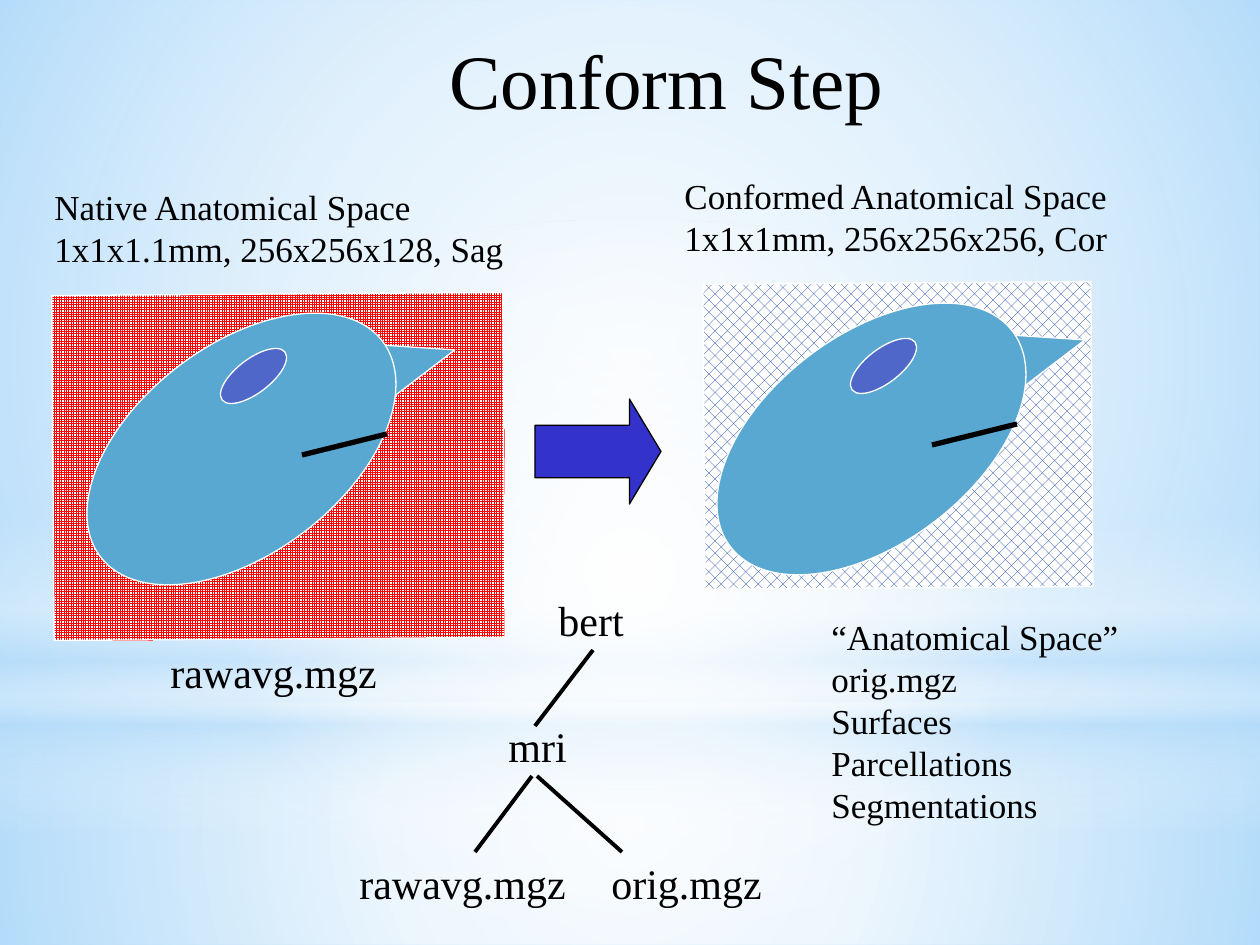
from dataclasses import dataclass

from lxml.etree import SubElement
from pptx import Presentation
from pptx.dml.color import RGBColor
from pptx.enum.dml import MSO_PATTERN
from pptx.enum.shapes import MSO_CONNECTOR, MSO_SHAPE
from pptx.enum.text import MSO_ANCHOR, MSO_AUTO_SIZE, PP_ALIGN
from pptx.oxml.ns import qn
from pptx.util import Emu, Pt


@dataclass(frozen=True)
class Theme:
    font: str = "Times New Roman"
    ink: str = "000000"
    white: str = "FFFFFF"
    sky: str = "B4DCFA"
    skin: str = "59A8D1"
    eye: str = "4E67C8"
    arrow: str = "3333CC"
    red: str = "FF0000"
    navy: str = "003399"
    title: int = 44
    label: int = 24
    body: int = 20


THEME = Theme()
TILT = 322.6


def px(*values):
    return [Emu(round(v * 914400 / 126)) for v in values]


def rgb(code):
    return RGBColor.from_string(code)


def write(frame, text, size=THEME.body, align=PP_ALIGN.LEFT, wrap=True,
          fit=MSO_AUTO_SIZE.SHAPE_TO_FIT_TEXT, anchor=MSO_ANCHOR.TOP):
    frame.text = text
    frame.word_wrap = wrap
    frame.auto_size = fit
    frame.vertical_anchor = anchor
    for para in frame.paragraphs:
        para.alignment = align
        para.font.name = THEME.font
        para.font.size = Pt(size)
        para.font.color.rgb = rgb(THEME.ink)


def add_text(slide, box, text, **style):
    write(slide.shapes.add_textbox(*px(*box)).text_frame, text, **style)


def add_shape(shapes, kind, box, fill=None, line=None, turn=0):
    shape = shapes.add_shape(kind, *px(*box))
    shape.shadow.inherit = False
    shape.rotation = turn
    if fill:
        shape.fill.solid()
        shape.fill.fore_color.rgb = rgb(fill)
    if line:
        shape.line.color.rgb = rgb(line)
        shape.line.width = Pt(0.75)
    else:
        shape.line.fill.background()
    return shape


def add_line(shapes, ends, width):
    line = shapes.add_connector(MSO_CONNECTOR.STRAIGHT, *px(*ends))
    line.line.color.rgb = rgb(THEME.ink)
    line.line.width = Pt(width)
    SubElement(line._element.spPr, qn("a:effectLst"))


def add_glow(slide, kind, box, stops, radial=True):
    shape = add_shape(slide.shapes, kind, box)
    grad = shape._element.spPr.makeelement(qn("a:gradFill"), {"rotWithShape": "1"})
    stop_list = SubElement(grad, qn("a:gsLst"))
    for place, color, alpha in stops:
        stop = SubElement(stop_list, qn("a:gs"), pos=str(place * 1000))
        tint = SubElement(stop, qn("a:srgbClr"), val=color)
        SubElement(tint, qn("a:alpha"), val=str(alpha * 1000))
    if radial:
        ring = SubElement(grad, qn("a:path"), path="circle")
        SubElement(ring, qn("a:fillToRect"), dict.fromkeys("ltrb", "50000"))
    else:
        SubElement(grad, qn("a:lin"), ang="5400000", scaled="0")
    shape._element.spPr.find(qn("a:prstGeom")).addnext(grad)


def add_backdrop(slide):
    white, sky = THEME.white, THEME.sky
    slide.background.fill.solid()
    slide.background.fill.fore_color.rgb = rgb(sky)
    rect = MSO_SHAPE.RECTANGLE
    add_glow(slide, rect, (0, 703, 1260, 242),
             [(0, white, 91), (37, white, 76), (100, sky, 79)])
    add_glow(slide, rect, (0, 0, 1260, 703),
             [(0, white, 89), (48, white, 62), (100, sky, 79)])
    add_glow(slide, rect, (0, 519, 1260, 315),
             [(0, white, 0), (29, white, 30), (45, sky, 40),
              (55, white, 26), (65, sky, 60), (100, white, 0)], radial=False)
    add_glow(slide, MSO_SHAPE.OVAL, (0, 220, 1260, 703),
             [(0, white, 100), (56, white, 0)])


def add_head(slide, left, top, field, weave, color):
    shapes = slide.shapes.add_group_shape().shapes
    back = add_shape(shapes, MSO_SHAPE.RECTANGLE, field, line=THEME.white, turn=359.6)
    back.fill.patterned()
    back.fill.pattern = weave
    back.fill.fore_color.rgb = rgb(color)
    back.fill.back_color.rgb = rgb(THEME.white)
    parts = [
        (MSO_SHAPE.RIGHT_TRIANGLE, 299, 0, 79, 69, THEME.skin),
        (MSO_SHAPE.OVAL, 0, 33, 355, 208, THEME.skin),
        (MSO_SHAPE.OVAL, 150, 47, 79, 34, THEME.eye),
    ]
    for kind, x, y, wide, high, fill in parts:
        add_shape(shapes, kind, (left + x, top + y, wide, high),
                  fill, THEME.white, TILT)
    add_line(shapes, (left + 238, top + 143, left + 323, top + 122), 3)


def add_arrow(slide):
    arrow = add_shape(slide.shapes, MSO_SHAPE.RIGHT_ARROW, (535, 399, 126, 105),
                      THEME.arrow, THEME.ink)
    arrow.adjustments[0] = 0.5
    arrow.adjustments[1] = 0.3


def add_title(slide, box, text):
    title = slide.shapes.title
    title.left, title.top, title.width, title.height = px(*box)
    write(title.text_frame, text, size=THEME.title, align=PP_ALIGN.CENTER,
          fit=MSO_AUTO_SIZE.NONE, anchor=MSO_ANCHOR.MIDDLE)
    title.element.getparent().append(title.element)


def add_tree(slide):
    labels = [
        (599, 851, 176, "orig.mgz"),
        (496, 714, 84, "mri"),
        (347, 851, 233, "rawavg.mgz"),
        (546, 588, 92, "bert"),
        (158, 640, 233, "rawavg.mgz"),
    ]
    for left, top, wide, text in labels:
        add_text(slide, (left, top, wide, 64), text, size=THEME.label, wrap=False)
    for ends in [(475, 852, 532, 776), (622, 852, 537, 776), (535, 726, 593, 650)]:
        add_line(slide.shapes, ends, 2.25)


def main():
    deck = Presentation()
    deck.slide_width, deck.slide_height = px(1260, 945)
    slide = deck.slides.add_slide(deck.slide_layouts[5])
    add_backdrop(slide)
    add_head(slide, 64, 312, (53, 294, 451, 345), MSO_PATTERN.SMALL_GRID, THEME.red)
    add_text(slide, (42, 179, 525, 97),
             "Native Anatomical Space 1x1x1.1mm, 256x256x128, Sag")
    add_head(slide, 694, 302, (704, 283, 388, 305), MSO_PATTERN.PERCENT_30, THEME.navy)
    add_text(slide, (672, 168, 525, 97),
             "Conformed Anatomical Space 1x1x1mm, 256x256x256, Cor")
    add_arrow(slide)
    add_text(slide, (819, 609, 315, 223),
             "“Anatomical Space”\norig.mgz\nSurfaces\nParcellations\nSegmentations")
    add_title(slide, (136, 0, 1061, 157), "Conform Step")
    add_tree(slide)
    deck.save("out.pptx")


if __name__ == "__main__":
    main()
